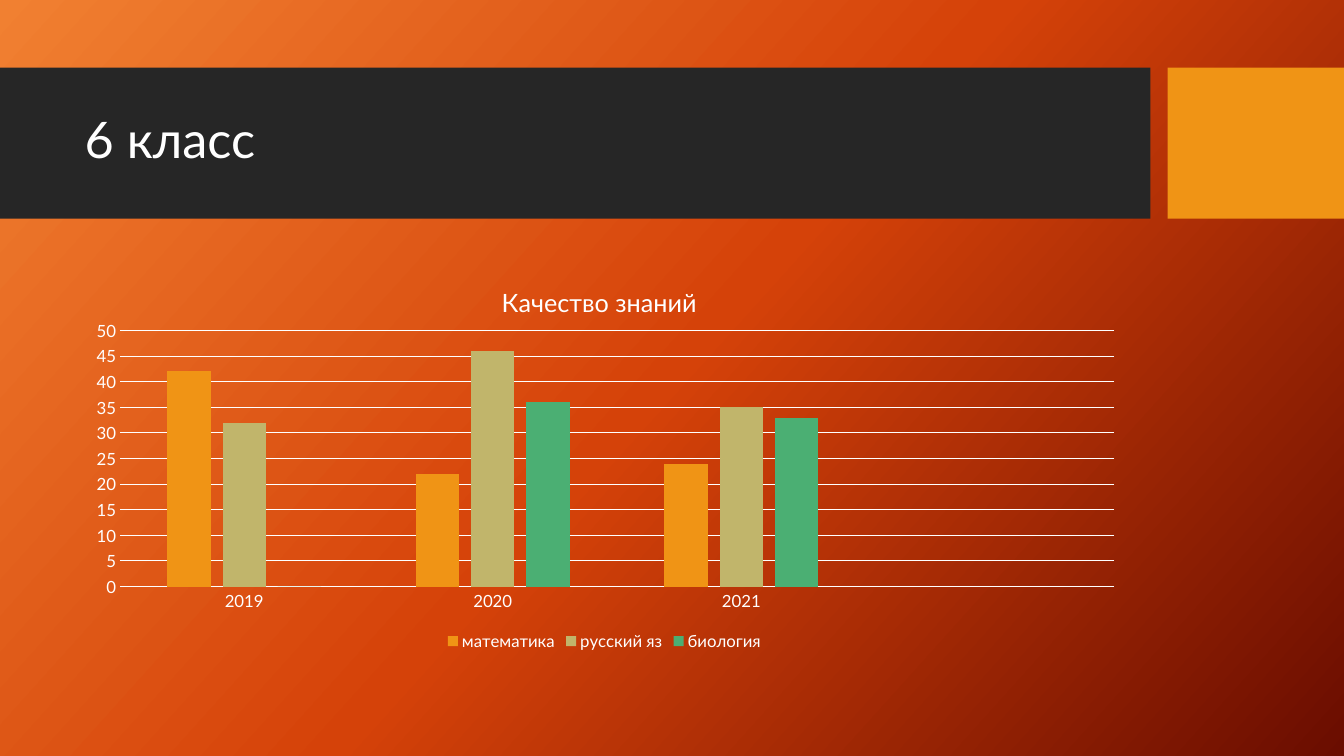
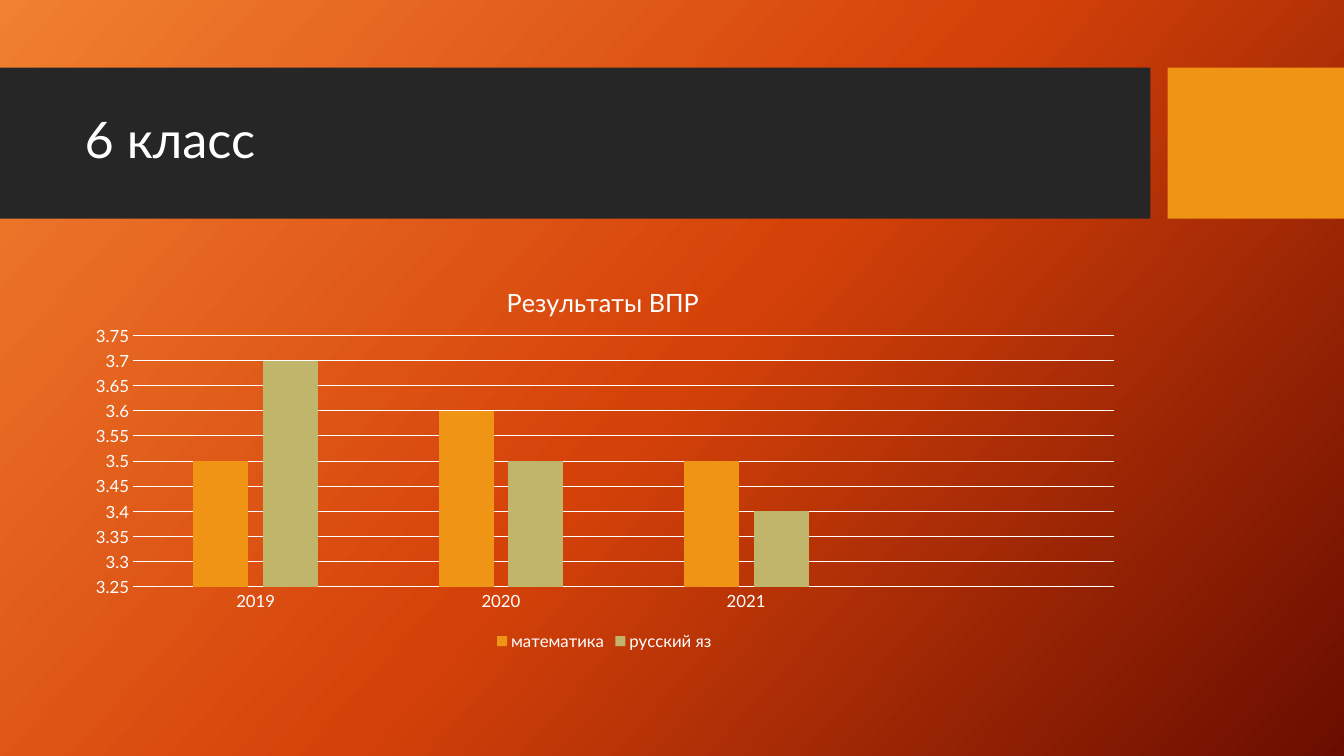
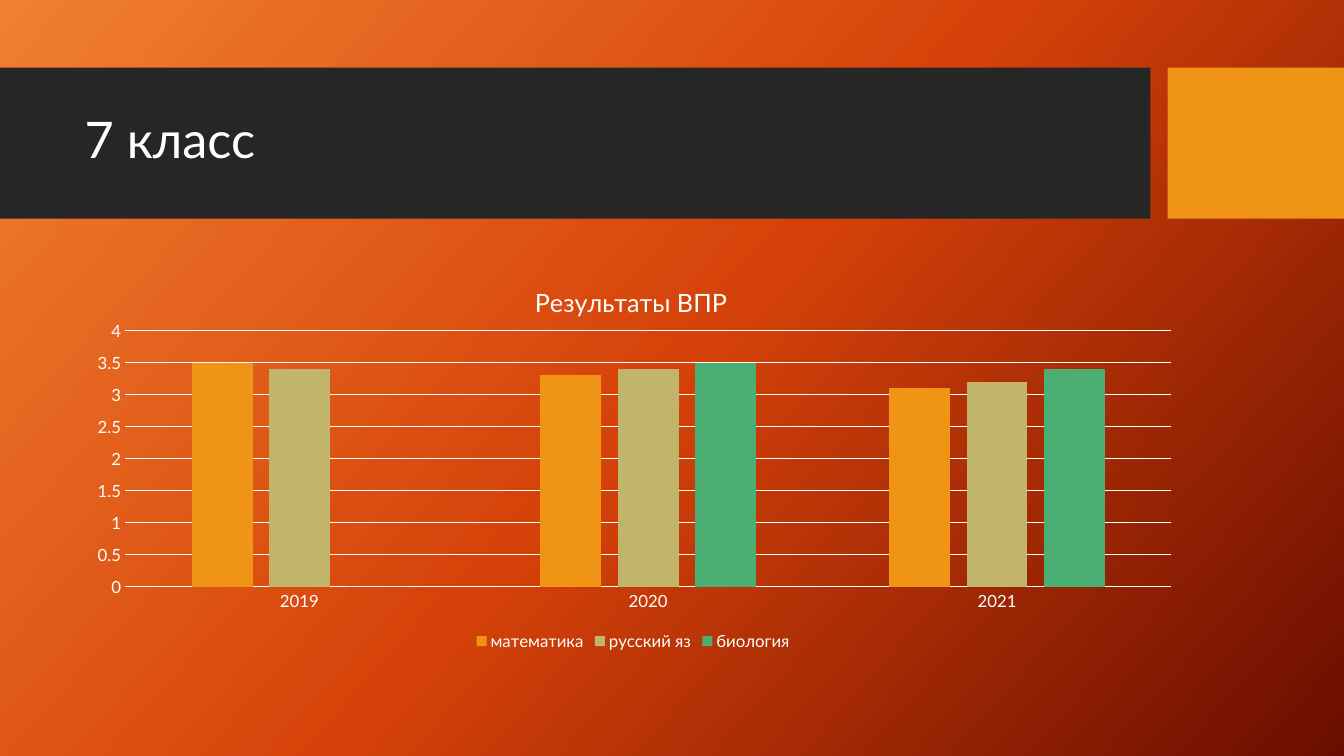
from copy import deepcopy

from pptx import Presentation
from pptx.chart.data import CategoryChartData
from pptx.dml.color import RGBColor
from pptx.enum.chart import XL_CHART_TYPE, XL_LEGEND_POSITION, XL_TICK_MARK
from pptx.enum.shapes import MSO_SHAPE
from pptx.enum.text import MSO_ANCHOR
from pptx.oxml import parse_xml
from pptx.oxml.ns import nsdecls, qn
from pptx.util import Inches, Pt

# Colours and font
WHITE = RGBColor(0xFF, 0xFF, 0xFF)
CHARCOAL = RGBColor(0x26, 0x26, 0x26)
AMBER = RGBColor(0xF0, 0x94, 0x15)
SAND = RGBColor(0xC1, 0xB5, 0x6B)
GREEN = RGBColor(0x4B, 0xAF, 0x73)
GRADIENT = [
    (0, RGBColor(0xF1, 0x80, 0x31)),
    (0.5, RGBColor(0xD5, 0x42, 0x09)),
    (1, RGBColor(0x6A, 0x0D, 0x00)),
]
FONT = "Lato"

# Shared measures, in inches
BANDS = [(0, 11.41, CHARCOAL), (11.58, 1.75, AMBER)]
BAND_TOP, BAND_HEIGHT = 0.67, 1.5
CONTENT_LEFT = 0.74
CHART_TOP, CHART_HEIGHT = 2.56, 3.94
CHART_TITLE_TOP = 2.77
PLOT_RIGHT_GAP, PLOT_BOTTOM = 0.2, 5.82

SUBJECT_COLORS = {"математика": AMBER, "русский яз": SAND, "биология": GREEN}

SLIDES = [
    {
        "heading": "6 класс",
        "title": "Качество знаний",
        "title_left": 4.93,
        "width": 10.51,
        "plot": (1.19, 3.28),
        "scale": (0, 50, 5),
        "years": ["2019", "2020", "2021", ""],
        "marks": {
            "математика": [42, 22, 24, None],
            "русский яз": [32, 46, 35, None],
            "биология": [0, 36, 33, None],
        },
    },
    {
        "heading": "6 класс",
        "title": "Результаты ВПР",
        "title_left": 4.98,
        "width": 10.51,
        "plot": (1.32, 3.33),
        "scale": (3.25, 3.75, 0.05),
        "years": ["2019", "2020", "2021", ""],
        "marks": {
            "математика": [3.5, 3.6, 3.5, None],
            "русский яз": [3.7, 3.5, 3.4, None],
        },
    },
    {
        "heading": "7 класс",
        "title": "Результаты ВПР",
        "title_left": 5.26,
        "width": 11.08,
        "plot": (1.24, 3.28),
        "scale": (0, 4, 0.5),
        "years": ["2019", "2020", "2021"],
        "marks": {
            "математика": [3.5, 3.3, 3.1],
            "русский яз": [3.4, 3.4, 3.2],
            "биология": [0, 3.5, 3.4],
        },
    },
]


def apply_format(target, values):
    for name, value in values.items():
        setattr(target, name, value)


def format_font(font, size):
    apply_format(font, {"name": FONT, "size": Pt(size), "bold": False})
    font.color.rgb = WHITE


def format_line(line):
    line.width = Pt(0.75)
    line.color.rgb = WHITE


# Background and bands, defined on the master
def paint_background(master):
    fill = master.background.fill
    fill.gradient()
    fill.gradient_angle = 360 - 42
    stop_list = master.element.cSld.find(".//" + qn("a:gsLst"))
    stop_list.append(deepcopy(stop_list[-1]))
    for stop, (position, color) in zip(fill.gradient_stops, GRADIENT):
        stop.position = position
        stop.color.rgb = color


def add_bands(master, slide):
    """Draw the bands on a slide, then move them to the master."""
    for left, width, color in BANDS:
        band = slide.shapes.add_shape(
            MSO_SHAPE.RECTANGLE, Inches(left), Inches(BAND_TOP),
            Inches(width), Inches(BAND_HEIGHT))
        band.shadow.inherit = False
        band.fill.solid()
        band.fill.fore_color.rgb = color
        band.line.fill.background()
        master.element.cSld.spTree.append(band.element)


def set_heading(slide, text):
    heading = slide.shapes.title
    apply_format(heading, {
        "left": Inches(CONTENT_LEFT), "top": Inches(0.82),
        "width": Inches(10.51), "height": Inches(1.18)})
    frame = heading.text_frame
    apply_format(frame, {
        "text": text, "word_wrap": True, "vertical_anchor": MSO_ANCHOR.MIDDLE})
    paragraph = frame.paragraphs[0]
    apply_format(paragraph, {"line_spacing": 0.9, "alignment": 1})
    format_font(paragraph.runs[0].font, 36)


# Charts
def place_part(part, index, fractions, inner=False):
    """Fix a chart part at fractions (x, y and perhaps w, h) of the chart."""
    for old in part.findall(qn("c:layout")):
        part.remove(old)
    target = '<c:layoutTarget val="inner"/>' if inner else ""
    modes = '<c:xMode val="edge"/><c:yMode val="edge"/>'
    sizes = "".join(f'<c:{key} val="{value:.4f}"/>'
                    for key, value in zip("xywh", fractions))
    part.insert(index, parse_xml(
        f'<c:layout {nsdecls("c")}><c:manualLayout>{target}{modes}{sizes}'
        "</c:manualLayout></c:layout>"))


def format_axes(chart, scale):
    years, marks = chart.category_axis, chart.value_axis
    for axis in (years, marks):
        apply_format(axis, {
            "major_tick_mark": XL_TICK_MARK.NONE,
            "minor_tick_mark": XL_TICK_MARK.NONE})
        format_font(axis.tick_labels.font, 12)
    format_line(years.format.line)
    apply_format(marks, dict(
        zip(("minimum_scale", "maximum_scale", "major_unit"), scale)))
    marks.has_major_gridlines = True
    format_line(marks.major_gridlines.format.line)
    marks.format.line.fill.background()
    apply_format(marks.tick_labels, {
        "number_format": "General", "number_format_is_linked": False})


def add_chart(slide, content):
    data = CategoryChartData()
    data.categories = content["years"]
    for subject, marks in content["marks"].items():
        data.add_series(subject, marks)
    width = content["width"]
    chart = slide.shapes.add_chart(
        XL_CHART_TYPE.COLUMN_CLUSTERED, Inches(CONTENT_LEFT), Inches(CHART_TOP),
        Inches(width), Inches(CHART_HEIGHT), data).chart
    format_font(chart.font, 10)

    # Columns
    plot = chart.plots[0]
    apply_format(plot, {
        "gap_width": 219, "overlap": -27, "vary_by_categories": False})
    for series in plot.series:
        series.format.fill.solid()
        series.format.fill.fore_color.rgb = SUBJECT_COLORS[series.name]
    format_axes(chart, content["scale"])

    # Legend and title
    chart.has_legend = True
    apply_format(chart.legend, {
        "position": XL_LEGEND_POSITION.BOTTOM, "include_in_layout": False})
    format_font(chart.legend.font, 12)
    title = chart.chart_title
    title.text_frame.text = content["title"]
    format_font(title.text_frame.paragraphs[0].runs[0].font, 18)

    # Positions inside the chart
    place_part(title._element, 1, (
        (content["title_left"] - CONTENT_LEFT) / width,
        (CHART_TITLE_TOP - CHART_TOP) / CHART_HEIGHT))
    left, top = content["plot"]
    right = CONTENT_LEFT + width - PLOT_RIGHT_GAP
    plot_area = chart.element.find(".//" + qn("c:plotArea"))
    place_part(plot_area, 0, (
        (left - CONTENT_LEFT) / width, (top - CHART_TOP) / CHART_HEIGHT,
        (right - left) / width, (PLOT_BOTTOM - top) / CHART_HEIGHT), inner=True)


def main():
    prs = Presentation()
    prs.slide_width, prs.slide_height = Inches(13.33), Inches(7.5)
    title_only = prs.slide_layouts[5]
    paint_background(prs.slide_master)
    for content in SLIDES:
        slide = prs.slides.add_slide(title_only)
        set_heading(slide, content["heading"])
        add_chart(slide, content)
    add_bands(prs.slide_master, prs.slides[0])
    prs.save("out.pptx")


if __name__ == "__main__":
    main()
